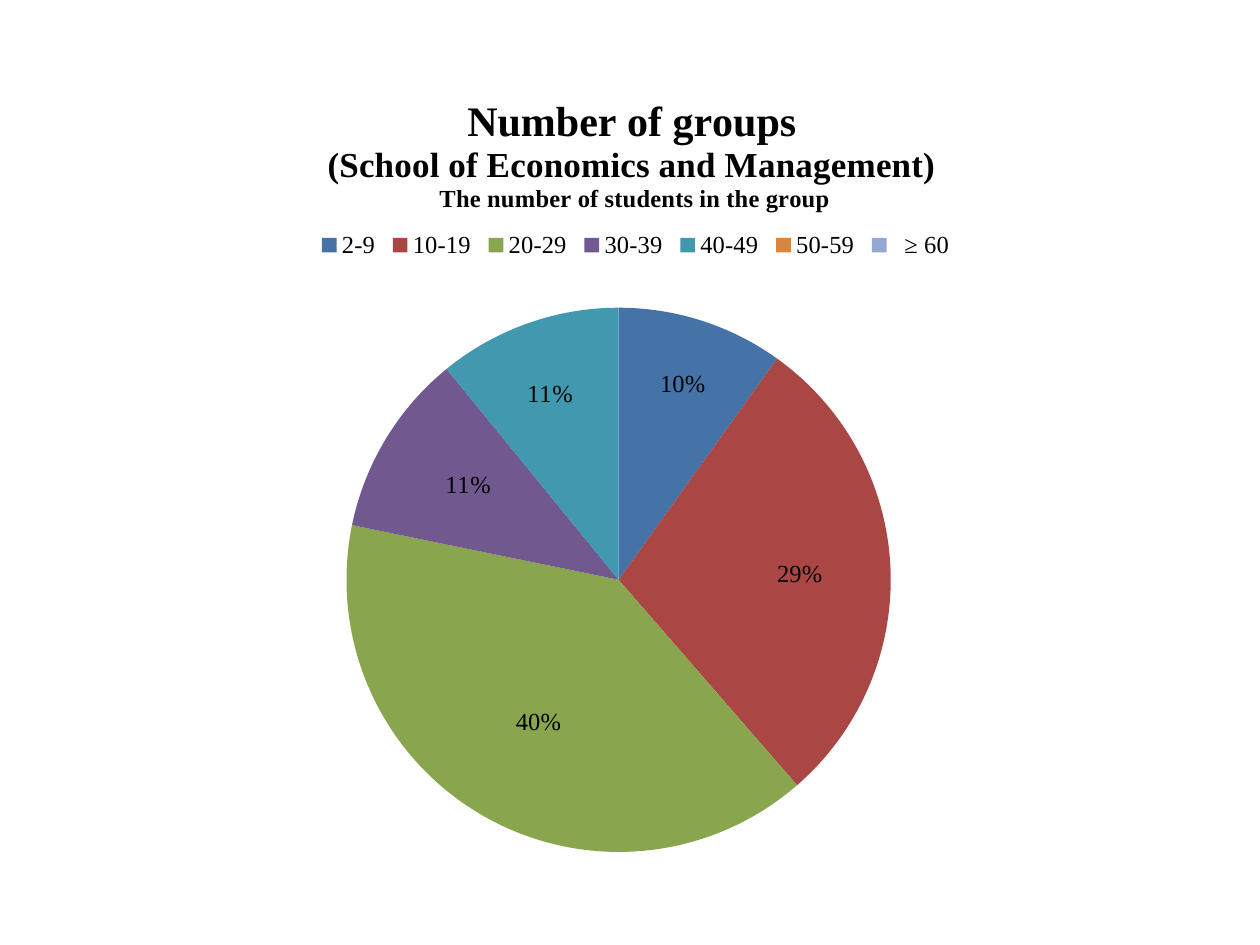
from math import cos, pi, sin

from lxml import etree
from pptx import Presentation
from pptx.chart.data import CategoryChartData
from pptx.dml.color import RGBColor
from pptx.enum.chart import XL_CHART_TYPE, XL_LABEL_POSITION, XL_LEGEND_POSITION
from pptx.oxml import parse_xml
from pptx.oxml.ns import nsdecls, qn
from pptx.util import Inches, Pt

PIE = XL_CHART_TYPE.PIE
TOP = XL_LEGEND_POSITION.TOP
CENTER = XL_LABEL_POSITION.CENTER

TITLE_LINES = [
    ("Number of groups", 24),
    ("(School of Economics and Management)", 20),
    (" The number of students in the group", 14),
]
GROUPS = [
    ("2-9", 10, "4572A7"),
    ("10-19", 29, "AA4643"),
    ("20-29", 40, "89A54E"),
    ("30-39", 11, "71588F"),
    ("40-49", 11, "4198AF"),
    ("50-59", None, "DB843D"),
    ("  ≥ 60", None, "93A9CF"),
]
LABEL_RADII = [0.74, 0.68, 0.62, 0.67, 0.73]
THEME = {"font": "Times New Roman", "text": RGBColor(0, 0, 0), "size": Pt(14)}

SLIDE_WIDTH, SLIDE_HEIGHT = 10, 7.5
CHART_LEFT, CHART_TOP, CHART_WIDTH, CHART_HEIGHT = 0.5, 0.47, 9, 6.56
PIE_WIDTH, PIE_HEIGHT = 0.48, 0.66


def layout(**shares):
    element = parse_xml(f"<c:layout {nsdecls('c')}><c:manualLayout/></c:layout>")
    for name, value in shares.items():
        etree.SubElement(element[0], qn(f"c:{name}")).set("val", str(value))
    return element


def place(parent, before, **shares):
    for old in parent.findall(qn("c:layout")):
        parent.remove(old)
    parent.find(qn(f"c:{before}")).addprevious(layout(**shares))


def style(font, size=THEME["size"], bold=False):
    font.name = THEME["font"]
    font.size = size
    font.bold = bold
    font.color.rgb = THEME["text"]


def add_title(chart):
    frame = chart.chart_title.text_frame
    for index, (text, size) in enumerate(TITLE_LINES):
        paragraph = frame.add_paragraph() if index else frame.paragraphs[0]
        run = paragraph.add_run()
        run.text = text
        style(paragraph.font, Pt(size), True)
        style(run.font, Pt(size), True)
    title = chart._chartSpace.chart.find(qn("c:title"))
    place(title, "overlay", xMode="edge", yMode="edge", x=0.23, y=0.04)


def add_legend(chart):
    chart.has_legend = True
    legend = chart.legend
    legend.position = TOP
    legend.include_in_layout = False
    style(legend.font)
    place(legend._element, "overlay", xMode="edge", yMode="edge",
          x=0.22, y=0.2, w=0.57, h=0.05)


def add_labels(plot):
    plot.has_data_labels = True
    plot.data_labels.show_percentage = True
    plot.data_labels.show_value = False
    style(plot.data_labels.font)
    total = sum(value or 0 for _, value, _ in GROUPS)
    before = 0
    for index, radius in enumerate(LABEL_RADII):
        value = GROUPS[index][1]
        angle = 2 * pi * (before + value / 2) / total
        before += value
        label = plot.series[0].points[index].data_label
        style(label.font)
        label.position = CENTER
        element = label._get_or_add_dLbl()
        element.find(qn("c:showVal")).set("val", "0")
        element.find(qn("c:showPercent")).set("val", "1")
        shift = (radius - 0.5) / 2
        place(element, "txPr", x=round(shift * PIE_WIDTH * sin(angle), 2),
              y=round(-shift * PIE_HEIGHT * cos(angle), 2))
    series_labels = plot.series[0].data_labels
    series_labels.show_percentage = True
    series_labels.show_value = False
    style(series_labels.font)


def main():
    presentation = Presentation()
    presentation.slide_width = Inches(SLIDE_WIDTH)
    presentation.slide_height = Inches(SLIDE_HEIGHT)
    slide = presentation.slides.add_slide(presentation.slide_layouts[6])
    data = CategoryChartData()
    data.categories = [name for name, _, _ in GROUPS]
    data.add_series("Series 1", [value for _, value, _ in GROUPS])
    box = map(Inches, (CHART_LEFT, CHART_TOP, CHART_WIDTH, CHART_HEIGHT))
    chart = slide.shapes.add_chart(PIE, *box, data).chart
    style(chart.font)
    add_title(chart)
    add_legend(chart)
    plot = chart.plots[0]
    plot.vary_by_categories = True
    for index, (_, _, color) in enumerate(GROUPS):
        fill = plot.series[0].points[index].format.fill
        fill.solid()
        fill.fore_color.rgb = RGBColor.from_string(color)
    add_labels(plot)
    place(chart._chartSpace.chart.plotArea, "pieChart", layoutTarget="inner",
          xMode="edge", yMode="edge", x=0.25, y=0.3, w=PIE_WIDTH, h=PIE_HEIGHT)
    presentation.save("out.pptx")


if __name__ == "__main__":
    main()
